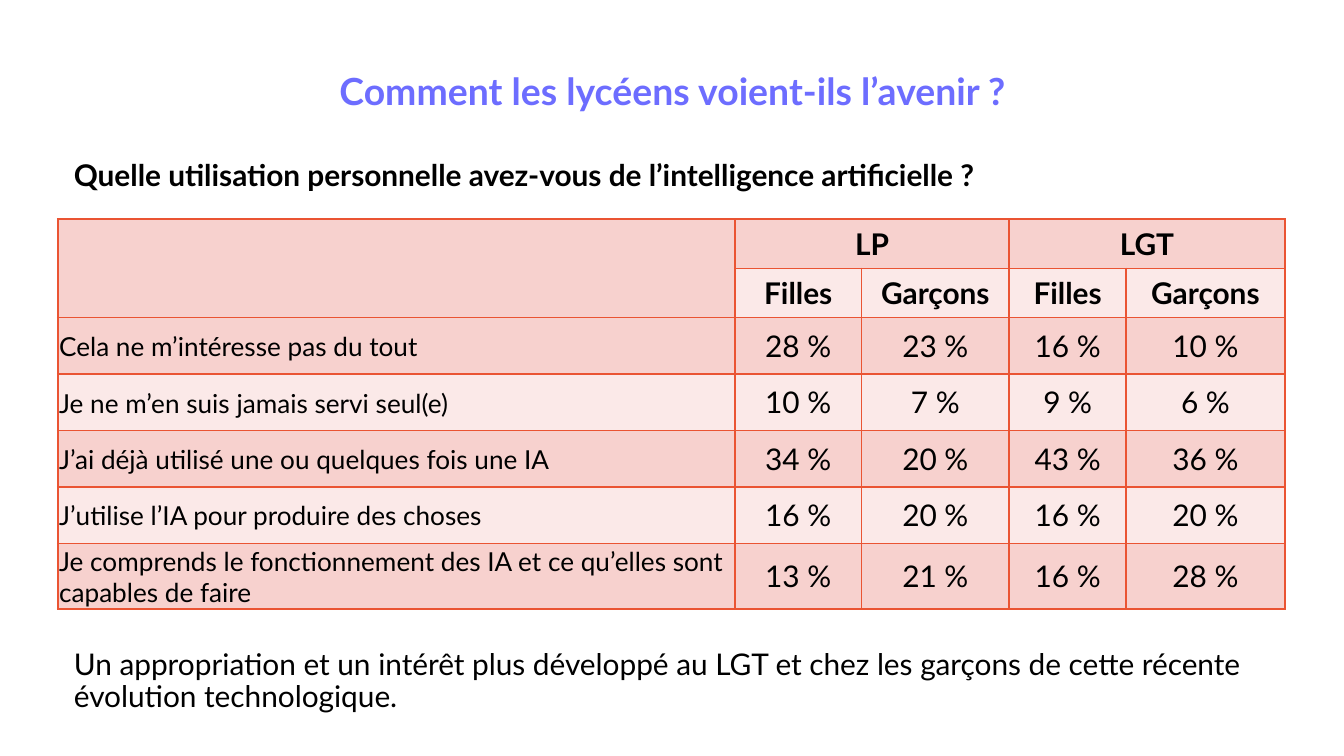
"""Build a slide with a table on how pupils use artificial intelligence."""
from lxml import etree
from pptx import Presentation
from pptx.dml.color import RGBColor
from pptx.enum.text import MSO_ANCHOR, MSO_AUTO_SIZE, PP_ALIGN
from pptx.oxml.ns import qn
from pptx.util import Inches, Pt

MIDDLE = MSO_ANCHOR.MIDDLE
NO_AUTOFIT = MSO_AUTO_SIZE.NONE
LEFT, CENTER = PP_ALIGN.LEFT, PP_ALIGN.CENTER
COLORS = {
    "title": "6D6DFF",
    "text": "000000",
    "border": "EA5433",
    "dark_row": "F7D1CE",
    "light_row": "FBE9E8",
}
HEADERS = [["", "LP", "", "LGT", ""], ["", "Filles", "Garçons", "Filles", "Garçons"]]
ANSWERS = [
    ("Cela ne m’intéresse pas du tout", 28, 23, 16, 10),
    ("Je ne m’en suis jamais servi seul(e)", 10, 7, 9, 6),
    ("J’ai déjà utilisé une ou quelques fois une IA", 34, 20, 43, 36),
    ("J’utilise l’IA pour produire des choses", 16, 20, 16, 20),
    ("Je comprends le fonctionnement des IA et ce qu’elles sont capables de faire", 13, 21, 16, 28),
]
COLUMN_WIDTHS = [5.04, 0.94, 1.1, 0.87, 1.18]
ROW_HEIGHTS = [0.35, 0.35, 0.42, 0.42, 0.42, 0.42, 0.49]


def write_text(text_frame, text, size, bold, alignment, color="text"):
    paragraph = text_frame.paragraphs[0]
    paragraph.alignment = alignment
    run = paragraph.add_run()
    run.text = text
    run.font.name = "Lato"
    run.font.size = Pt(size)
    run.font.bold = bold
    run.font.color.rgb = RGBColor.from_string(COLORS[color])
    return paragraph


def add_borders(cell):
    properties = cell._tc.get_or_add_tcPr()
    for side in ("a:lnL", "a:lnR", "a:lnT", "a:lnB"):
        line = etree.SubElement(properties, qn(side), w=str(Pt(1)))
        fill = etree.SubElement(line, qn("a:solidFill"))
        etree.SubElement(fill, qn("a:srgbClr"), val=COLORS["border"])


presentation = Presentation()
presentation.slide_width = Inches(10)
presentation.slide_height = Inches(10 * 9 / 16)
slide = presentation.slides.add_slide(presentation.slide_layouts[5])

title = slide.shapes.title
title.left, title.top = Inches(0.43), Inches(0.37)
title.width, title.height = Inches(9.13), Inches(0.94)
title.text_frame.auto_size = NO_AUTOFIT
title.text_frame.vertical_anchor = MIDDLE
title.text_frame.margin_left = Inches(0.12)
title.text_frame.margin_bottom = Inches(0.34)
paragraph = write_text(
    title.text_frame, "Comment les lycéens voient-ils l’avenir ?", 20, True, CENTER, "title"
)
paragraph.line_spacing = 0.9

for text, top, width, height, bold in [
    ("Quelle utilisation personnelle avez-vous de l’intelligence artificielle ?", 0.92, 9.13, 0.79, True),
    ("Un appropriation et un intérêt plus développé au LGT et chez les garçons "
     "de cette récente évolution technologique.", 4.78, 9.29, 0.59, False),
]:
    text_box = slide.shapes.add_textbox(Inches(0.43), Inches(top), Inches(width), Inches(height))
    text_frame = text_box.text_frame
    text_frame.word_wrap = True
    text_frame.vertical_anchor = MIDDLE
    text_frame.margin_left = Inches(0.12)
    paragraph = write_text(text_frame, text, 16, bold, LEFT)
    paragraph.line_spacing = 0.9

rows = HEADERS + [[label] + [f"{share} %" for share in shares] for label, *shares in ANSWERS]
table = slide.shapes.add_table(
    len(rows), len(COLUMN_WIDTHS), Inches(0.43), Inches(1.63),
    Inches(sum(COLUMN_WIDTHS)), Inches(sum(ROW_HEIGHTS)),
).table
for column, width in zip(table.columns, COLUMN_WIDTHS):
    column.width = Inches(width)
for row, height in zip(table.rows, ROW_HEIGHTS):
    row.height = Inches(height)

for row_index, texts in enumerate(rows):
    is_header = row_index < len(HEADERS)
    row_color = COLORS["light_row" if row_index % 2 else "dark_row"]
    for column_index, text in enumerate(texts):
        cell = table.cell(row_index, column_index)
        add_borders(cell)
        cell.fill.solid()
        cell.fill.fore_color.rgb = RGBColor.from_string(row_color)
        cell.vertical_anchor = MIDDLE
        is_label = column_index == 0
        if is_label or not text:
            cell.margin_left = cell.margin_right = cell.margin_top = Inches(0.01)
            cell.margin_bottom = 0
        if text:
            write_text(cell.text_frame, text, 14 if is_label else 16, is_header,
                       LEFT if is_label else CENTER)

for first, last in [((0, 0), (1, 0)), ((0, 1), (0, 2)), ((0, 3), (0, 4))]:
    table.cell(*first).merge(table.cell(*last))

presentation.save("out.pptx")
